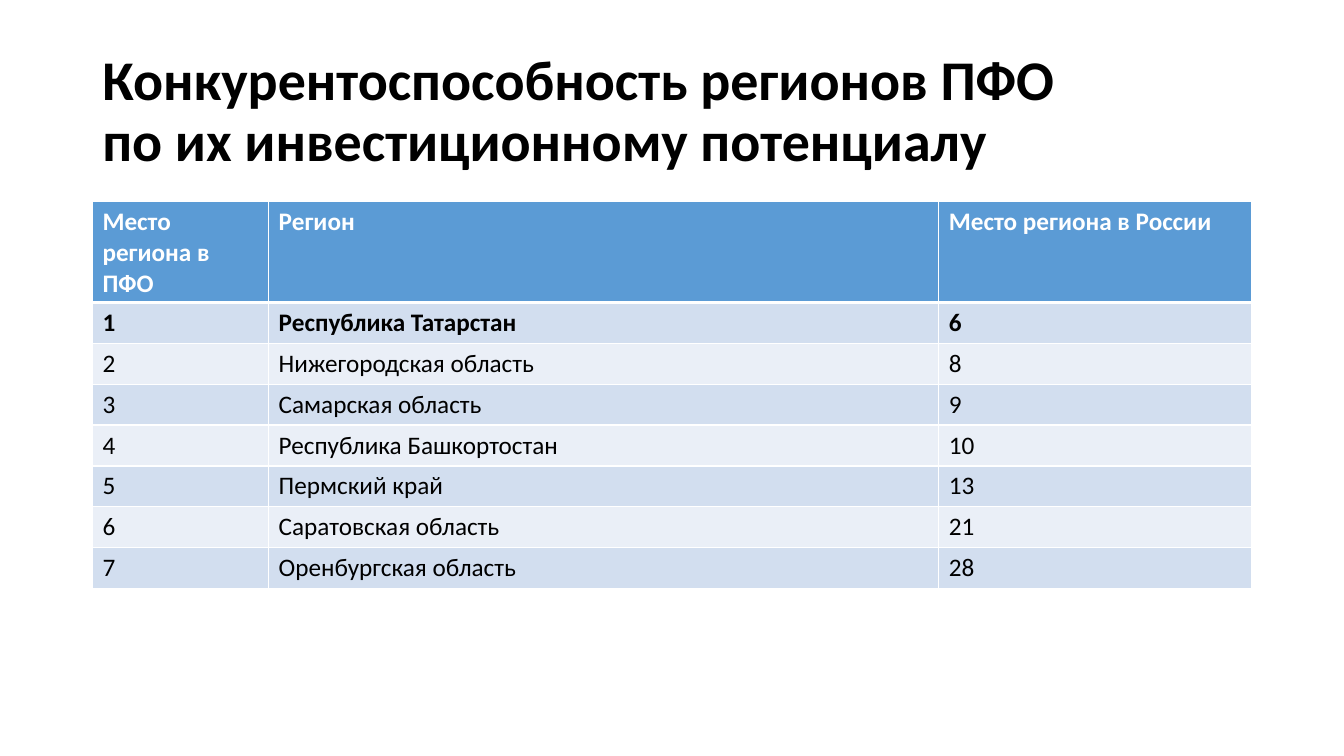
"""Build a slide that ranks Volga regions by investment potential."""
from dataclasses import dataclass

from lxml import etree
from pptx import Presentation
from pptx import util as u
from pptx.dml.color import RGBColor
from pptx.enum import text
from pptx.oxml import ns


@dataclass(frozen=True)
class Theme:
    font: str = "Calibri"
    ink: str = "000000"
    white: str = "FFFFFF"
    head: str = "5B9BD5"
    bands: tuple = ("D2DEEF", "EAEFF7")
    title: int = 40
    body: int = 18
    thin: int = 1
    thick: int = 3


THEME = Theme()
LEFT, WIDTH = 2.33, 29.21
COLS = (4.44, 16.89, 7.88)
HEAD_H, ROW_H = 2.54, 1.03
TITLE = "Конкурентоспособность регионов ПФО\vпо их инвестиционному потенциалу"
HEADS = ("Место региона в ПФО", "Регион", "Место региона в России")
RANKS = (
    ("Республика Татарстан", 6),
    ("Нижегородская область", 8),
    ("Самарская область", 9),
    ("Республика Башкортостан", 10),
    ("Пермский край", 13),
    ("Саратовская область", 21),
    ("Оренбургская область", 28),
)


def write(frame, words, size, color, bold):
    frame.text = words
    form = {"name": THEME.font, "size": u.Pt(size), "bold": bold}
    for run in frame.paragraphs[0].runs:
        for key, val in form.items():
            setattr(run.font, key, val)
        run.font.color.rgb = RGBColor.from_string(color)


def add_title(slide):
    box = slide.shapes.add_textbox(u.Cm(LEFT), u.Cm(1.01), u.Cm(WIDTH), u.Cm(3.68))
    frame = box.text_frame
    write(frame, TITLE, THEME.title, THEME.ink, True)
    form = {"word_wrap": True, "vertical_anchor": text.MSO_ANCHOR.MIDDLE}
    for key, val in form.items():
        setattr(frame, key, val)
    frame.paragraphs[0].line_spacing = 0.9


def edge(cell, top, base):
    sides = {"lnL": THEME.thin, "lnR": THEME.thin, "lnT": top, "lnB": base}
    props = cell._tc.get_or_add_tcPr()
    for pos, (side, wide) in enumerate(sides.items()):
        line = etree.Element(ns.qn(f"a:{side}"), w=str(u.Pt(wide)))
        fill = etree.SubElement(line, ns.qn("a:solidFill"))
        etree.SubElement(fill, ns.qn("a:srgbClr"), val=THEME.white)
        props.insert(pos, line)


def fill_row(table, row, words):
    head = row == 0
    back = THEME.head if head else THEME.bands[(row - 1) % 2]
    color = THEME.white if head else THEME.ink
    top = THEME.thick if row == 1 else THEME.thin
    base = THEME.thick if head else THEME.thin
    table.rows[row].height = u.Cm(HEAD_H if head else ROW_H)
    for col, word in enumerate(words):
        cell = table.cell(row, col)
        write(cell.text_frame, str(word), THEME.body, color, row < 2)
        cell.fill.solid()
        cell.fill.fore_color.rgb = RGBColor.from_string(back)
        edge(cell, top, base)


def add_ranks(slide):
    rows = [HEADS] + [(place, *rank) for place, rank in enumerate(RANKS, 1)]
    high = HEAD_H + ROW_H * len(RANKS)
    frame = slide.shapes.add_table(
        len(rows), len(COLS), u.Cm(LEFT), u.Cm(5.08), u.Cm(WIDTH), u.Cm(high))
    for col, wide in zip(frame.table.columns, COLS):
        col.width = u.Cm(wide)
    for row, words in enumerate(rows):
        fill_row(frame.table, row, words)


def main():
    deck = Presentation()
    size = {"slide_width": u.Cm(33.87), "slide_height": u.Cm(19.05)}
    for key, val in size.items():
        setattr(deck, key, val)
    slide = deck.slides.add_slide(deck.slide_layouts[6])
    add_title(slide)
    add_ranks(slide)
    deck.save("out.pptx")


if __name__ == "__main__":
    main()
